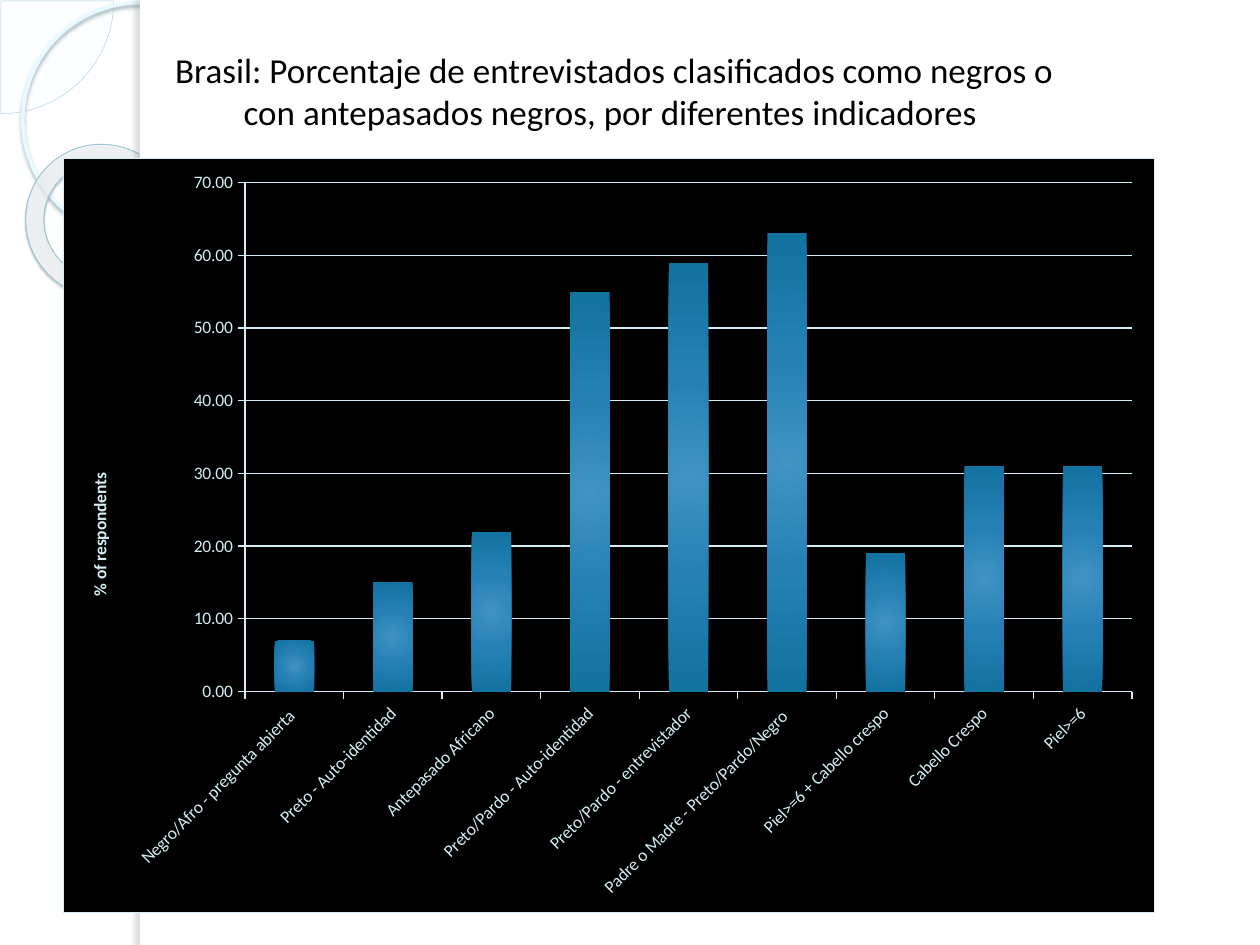
from dataclasses import dataclass
from typing import Any, Optional

import pptx
import pptx.chart.data
import pptx.dml.color
import pptx.enum.chart
import pptx.enum.shapes
import pptx.enum.text
import pptx.oxml
import pptx.oxml.ns
import pptx.util

Pt = pptx.util.Pt
Kind = pptx.enum.shapes.MSO_SHAPE
FONT = "Calibri"
NS = pptx.oxml.ns.nsdecls("a", "c")
WIDE, TALL = 624, 432
HUES = {
    "white": "FFFFFF", "black": "000000", "pale": "D5EDF4",
    "wedge": "F6FDFF", "rim": "A9D2DE", "ring": "E8FAFF", "band": "9CC6D2",
    "glow": "98B2BA", "dusk": "495A5F", "edge": "69767A",
    "frost": "F8FDFF", "snow": "FCFEFF", "sky": "97E5FC",
    "light": "4193C4", "mid": "2680B5", "deep": "1272A0",
}


@dataclass
class Shade:
    hue: str
    alpha: int
    blur: float
    dist: float
    angle: int


@dataclass
class Decor:
    kind: Any
    box: tuple[float, float, float, float]
    fill: Optional[str] = None
    alpha: int = 100
    line: Optional[tuple[str, float]] = None
    shade: Optional[Shade] = None
    tweaks: tuple[float, ...] = ()
    turn: float = 0
    blend: str = ""


def color(name: str) -> Any:
    return pptx.dml.color.RGBColor.from_string(HUES[name])


def ink(name: str, alpha: int = 100) -> str:
    return f'<a:srgbClr val="{HUES[name]}"><a:alpha val="{alpha * 1000}"/></a:srgbClr>'


def radial(stops: list[tuple[int, str, int]], rect: tuple[int, int, int, int]) -> str:
    marks = "".join(f'<a:gs pos="{pos * 1000}">{ink(hue, alpha)}</a:gs>' for pos, hue, alpha in stops)
    sides = " ".join(f'{side}="{size * 1000}"' for side, size in zip("ltrb", rect))
    return (f'<a:gradFill {NS}><a:gsLst>{marks}</a:gsLst>'
            f'<a:path path="circle"><a:fillToRect {sides}/></a:path></a:gradFill>')


def draw(slide: Any, item: Decor) -> None:
    shape = slide.shapes.add_shape(item.kind, *map(Pt, item.box))
    shape.shadow.inherit = False
    shape.rotation = item.turn
    for spot, value in enumerate(item.tweaks):
        shape.adjustments[spot] = value
    if item.fill:
        shape.fill.solid()
        shape.fill.fore_color.rgb = color(item.fill)
        tint = shape._element.spPr.find(".//" + pptx.oxml.ns.qn("a:srgbClr"))
        tint.append(pptx.oxml.parse_xml(f'<a:alpha {NS} val="{item.alpha * 1000}"/>'))
    else:
        shape.fill.background()
    if item.blend:
        empty = shape._element.spPr.find(pptx.oxml.ns.qn("a:noFill"))
        empty.getparent().replace(empty, pptx.oxml.parse_xml(item.blend))
    if item.line:
        shape.line.color.rgb = color(item.line[0])
        shape.line.width = Pt(item.line[1])
    else:
        shape.line.fill.background()
    if item.shade:
        cast = item.shade
        effects = shape._element.spPr.find(pptx.oxml.ns.qn("a:effectLst"))
        effects.append(pptx.oxml.parse_xml(
            f'<a:outerShdw {NS} blurRad="{Pt(cast.blur)}" dist="{Pt(cast.dist)}" '
            f'dir="{cast.angle * 60000}" rotWithShape="0">{ink(cast.hue, cast.alpha)}</a:outerShdw>'))


def place(part: Any, index: int, **spots: float) -> None:
    old = part.find(pptx.oxml.ns.qn("c:layout"))
    if old is not None:
        part.remove(old)
    modes = '<c:layoutTarget val="inner"/>' if "w" in spots else ""
    modes += '<c:xMode val="edge"/><c:yMode val="edge"/>'
    sizes = "".join(f'<c:{key} val="{value / (WIDE if key in "xw" else TALL)}"/>'
                    for key, value in spots.items())
    part.insert(index, pptx.oxml.parse_xml(
        f'<c:layout {NS}><c:manualLayout>{modes}{sizes}</c:manualLayout></c:layout>'))


def panel(line: str) -> Any:
    return pptx.oxml.parse_xml(
        f'<c:spPr {NS}><a:solidFill>{ink("black")}</a:solidFill>{line}</c:spPr>')


def style(font: Any, size: float, hue: str, bold: bool = False) -> None:
    font.name = FONT
    font.size = Pt(size)
    font.bold = bold
    font.color.rgb = color(hue)


def trace(line: Any) -> None:
    line.color.rgb = color("pale")
    line.width = Pt(0.75)


def plot(slide: Any, bars: dict[str, int]) -> None:
    data = pptx.chart.data.CategoryChartData(number_format="0.00")
    data.categories = list(bars)
    data.add_series("Series 1", list(bars.values()))
    chart = slide.shapes.add_chart(
        pptx.enum.chart.XL_CHART_TYPE.COLUMN_CLUSTERED,
        Pt(36), Pt(90), Pt(WIDE), Pt(TALL), data).chart
    chart.has_legend = False
    chart.has_title = False
    style(chart.font, 10, "pale")

    group = chart.plots[0]
    group.gap_width = 150
    group.vary_by_categories = False
    group.series[0].format.fill.background()
    empty = group.series[0]._element.find(".//" + pptx.oxml.ns.qn("a:noFill"))
    stops = [(0, "light", 100), (45, "mid", 100), (100, "deep", 100)]
    empty.getparent().replace(empty, pptx.oxml.parse_xml(radial(stops, (50, 50, 50, 50))))

    for axis in (chart.category_axis, chart.value_axis):
        axis.major_tick_mark = pptx.enum.chart.XL_TICK_MARK.OUTSIDE
        trace(axis.format.line)
        style(axis.tick_labels.font, 10, "pale")
    names = chart.category_axis.tick_labels.font._element.getparent().getparent().getparent()
    names.find(pptx.oxml.ns.qn("a:bodyPr")).set("rot", str(-45 * 60000))

    scale = chart.value_axis
    scale.minimum_scale, scale.maximum_scale, scale.major_unit = 0, 70, 10
    scale.tick_labels.number_format = "0.00"
    scale.tick_labels.number_format_is_linked = False
    trace(scale.major_gridlines.format.line)
    label = scale.axis_title
    label.text_frame.text = "% of respondents"
    style(label.text_frame.paragraphs[0].runs[0].font, 10, "pale", True)
    label.text_frame._txBody.bodyPr.set("rot", str(-90 * 60000))
    place(label._element, 1, x=12.4, y=178.5)

    space = chart._chartSpace
    area = space.chart.plotArea
    place(area, 0, x=103.8, y=14, w=507.4, h=291.4)
    area.append(panel("<a:ln><a:noFill/></a:ln>"))
    space.chart.addnext(panel(
        f'<a:ln w="{Pt(0.75)}"><a:solidFill>{ink("pale")}</a:solidFill></a:ln>'))


def head(slide: Any, text: str) -> None:
    title = slide.shapes.title
    title.left, title.top, title.width, title.height = map(Pt, (90, 24, 522, 85))
    frame = title.text_frame
    frame.text = text
    frame.word_wrap = True
    frame.vertical_anchor = pptx.enum.text.MSO_ANCHOR.TOP
    frame.paragraphs[0].alignment = pptx.enum.text.PP_ALIGN.CENTER
    style(frame.paragraphs[0].runs[0].font, 20, "black")
    title._element.getparent().append(title._element)


def main() -> None:
    deck = pptx.Presentation()
    deck.slide_width, deck.slide_height = Pt(720), Pt(540)
    slide = deck.slides.add_slide(deck.slide_layouts[5])
    veil = radial([(0, "frost", 70), (70, "snow", 55), (100, "sky", 60)], (-408, -50, 508, 150))
    decor = [
        Decor(Kind.PIE, (-64, -64, 129, 129), "wedge", 33, ("rim", 0.25), tweaks=(0, 54.02)),
        Decor(Kind.OVAL, (13, 1.5, 134, 134), line=("ring", 2.15),
              shade=Shade("glow", 85, 2, 2, 90)),
        Decor(Kind.DONUT, (14.4, 82.8, 88.5, 87), line=("band", 0.58),
              shade=Shade("dusk", 35, 1, 1.2, 75), tweaks=(0.12,), turn=38.6, blend=veil),
        Decor(Kind.RECTANGLE, (80, 0, 640, 540), "white"),
        Decor(Kind.RECTANGLE, (80, 0, 5.75, 540), "white", shade=Shade("edge", 25, 3, 3, 180)),
    ]
    for item in decor:
        draw(slide, item)
    plot(slide, {
        "Negro/Afro - pregunta abierta ": 7, "Preto - Auto-identidad": 15,
        "Antepasado Africano": 22, "Preto/Pardo - Auto-identidad": 55,
        "Preto/Pardo - entrevistador": 59, "Padre o Madre - Preto/Pardo/Negro ": 63,
        "Piel>=6 + Cabello crespo": 19, "Cabello Crespo": 31, "Piel>=6": 31,
    })
    head(slide, "Brasil: Porcentaje de entrevistados clasificados como negros o "
                "con antepasados negros, por diferentes indicadores ")
    deck.save("out.pptx")


if __name__ == "__main__":
    main()
